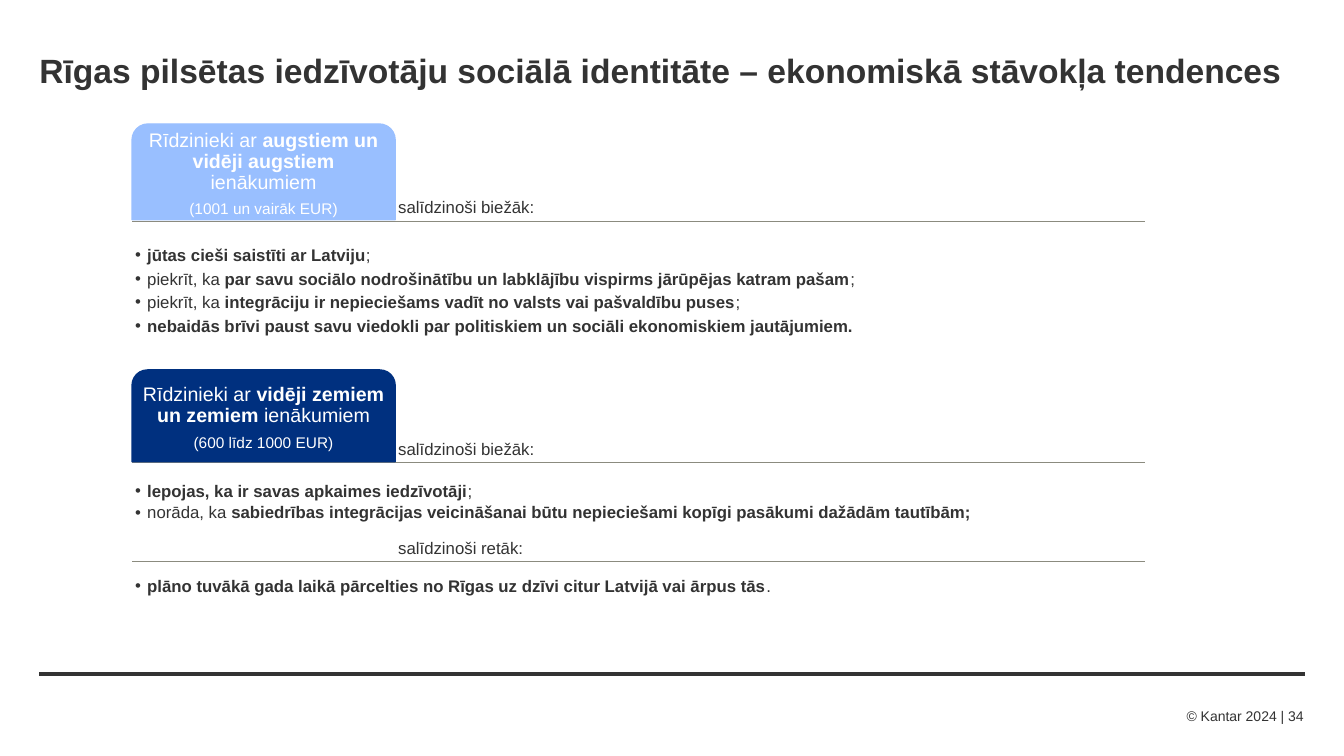
from lxml.etree import SubElement
from pptx import Presentation
from pptx.dml.color import RGBColor
from pptx.enum.shapes import MSO_CONNECTOR, MSO_SHAPE
from pptx.enum.text import MSO_ANCHOR, MSO_AUTO_SIZE, PP_ALIGN
from pptx.oxml.ns import qn
from pptx.util import Inches, Pt

DARK = RGBColor(0x33, 0x33, 0x33)
RULE = RGBColor(0x8B, 0x8B, 0x7F)
LIGHT_BLUE = RGBColor(0x99, 0xBF, 0xFF)
NAVY = RGBColor(0x00, 0x30, 0x7F)
WHITE = RGBColor(0xFF, 0xFF, 0xFF)

LEFT, RIGHT = 1.31, 11.36
TAB_WIDTH = 2.61
LABEL_LEFT = LEFT + TAB_WIDTH

prs = Presentation()
prs.slide_width, prs.slide_height = Inches(13.33), Inches(7.5)
slide = prs.slides.add_slide(prs.slide_layouts[5])


def write(shape, paragraphs, color=DARK, align=PP_ALIGN.LEFT, anchor=MSO_ANCHOR.TOP,
          inset=0.03, spacing=0.9, after=0, bullet=False):
    frame = shape.text_frame
    frame.word_wrap = True
    frame.auto_size = MSO_AUTO_SIZE.NONE
    frame.vertical_anchor = anchor
    frame.margin_left = frame.margin_right = Inches(inset)
    frame.margin_top = frame.margin_bottom = Inches(inset)
    for index, (size, runs) in enumerate(paragraphs):
        paragraph = frame.add_paragraph() if index else frame.paragraphs[0]
        if bullet:
            props = paragraph._p.get_or_add_pPr()
            props.set("marL", str(Inches(0.12)))
            props.set("indent", str(-Inches(0.12)))
            SubElement(props, qn("a:buFont")).set("typeface", "Arial")
            SubElement(props, qn("a:buChar")).set("char", "•")
        paragraph.alignment = align
        paragraph.line_spacing = spacing
        paragraph.space_before = Pt(0)
        paragraph.space_after = Pt(after)
        for text, bold in runs:
            run = paragraph.add_run()
            run.text = text
            run.font.name = "Arial"
            run.font.size = Pt(size)
            run.font.bold = bold
            run.font.color.rgb = color


def add_rule(left, right, y, color, width):
    rule = slide.shapes.add_connector(
        MSO_CONNECTOR.STRAIGHT, Inches(left), Inches(y), Inches(right), Inches(y))
    rule.line.color.rgb = color
    rule.line.width = Pt(width)
    SubElement(rule._element.spPr, qn("a:effectLst"))


title = slide.shapes.title
title.left, title.top = Inches(0.39), Inches(0.47)
title.width, title.height = Inches(12.69), Inches(0.44)
write(title, [(24, [("Rīgas pilsētas iedzīvotāju sociālā identitāte – ekonomiskā stāvokļa tendences", True)])],
      anchor=MSO_ANCHOR.MIDDLE, inset=0, spacing=1.0)

add_rule(0.39, 12.94, 6.69, DARK, 3)

income_tabs = [
    (1.23, 0.95, LIGHT_BLUE,
     [("Rīdzinieki ar ", False), ("augstiem un vidēji augstiem ", True), ("ienākumiem", False)],
     "(1001 un vairāk EUR)"),
    (3.67, 0.91, NAVY,
     [("Rīdzinieki ar ", False), ("vidēji zemiem un zemiem", True), (" ienākumiem", False)],
     "(600 līdz 1000 EUR)"),
]

findings = [
    (2.2, 2.18, "salīdzinoši biežāk:", 2.4, 1.2, 1.0, [
        [("jūtas cieši saistīti ar Latviju", True), (";", False)],
        [("piekrīt, ka ", False),
         ("par savu sociālo nodrošinātību un labklājību vispirms jārūpējas katram pašam", True), (";", False)],
        [("piekrīt, ka ", False),
         ("integrāciju ir nepieciešams vadīt no valsts vai pašvaldību puses", True), (";", False)],
        [("nebaidās brīvi paust savu viedokli par politiskiem un sociāli ekonomiskiem jautājumiem.", True)],
    ]),
    (4.59, 4.59, "salīdzinoši biežāk:", 4.76, 0.6, 0.9, [
        [("lepojas, ka ir savas apkaimes iedzīvotāji", True), (";", False)],
        [("norāda, ka ", False),
         ("sabiedrības integrācijas veicināšanai būtu nepieciešami kopīgi pasākumi dažādām tautībām;", True)],
    ]),
    (5.57, 5.57, "salīdzinoši retāk:", 5.7, 0.33, 0.9, [
        [("plāno tuvākā gada laikā pārcelties no Rīgas uz dzīvi citur Latvijā vai ārpus tās", True), (".", False)],
    ]),
]

for rule_y, label_bottom, label, list_top, list_height, spacing, points in findings:
    add_rule(LEFT, RIGHT, rule_y, RULE, 1)
    frequency = slide.shapes.add_textbox(
        Inches(LABEL_LEFT), Inches(label_bottom - 0.73), Inches(RIGHT - LABEL_LEFT), Inches(0.73))
    write(frequency, [(12, [(label, False)])], anchor=MSO_ANCHOR.BOTTOM)
    statements = slide.shapes.add_textbox(
        Inches(LEFT), Inches(list_top), Inches(RIGHT - LEFT), Inches(list_height))
    write(statements, [(12, runs) for runs in points], spacing=spacing, after=2.4, bullet=True)

for top, height, color, heading, income_range in income_tabs:
    tab = slide.shapes.add_shape(
        MSO_SHAPE.ROUND_2_SAME_RECTANGLE, Inches(LEFT), Inches(top), Inches(TAB_WIDTH), Inches(height))
    tab.shadow.inherit = False
    tab.fill.solid()
    tab.fill.fore_color.rgb = color
    tab.line.color.rgb = color
    tab.line.width = Pt(1)
    write(tab, [(14, heading), (11, [(income_range, False)])], color=WHITE,
          align=PP_ALIGN.CENTER, anchor=MSO_ANCHOR.MIDDLE, after=5.6)

footer = slide.shapes.add_textbox(Inches(11.36), Inches(6.99), Inches(1.57), Inches(0.22))
write(footer, [(10, [("© Kantar 2024 | 34", False)])], align=PP_ALIGN.RIGHT,
      anchor=MSO_ANCHOR.MIDDLE, inset=0, spacing=1.0)

prs.save("out.pptx")
